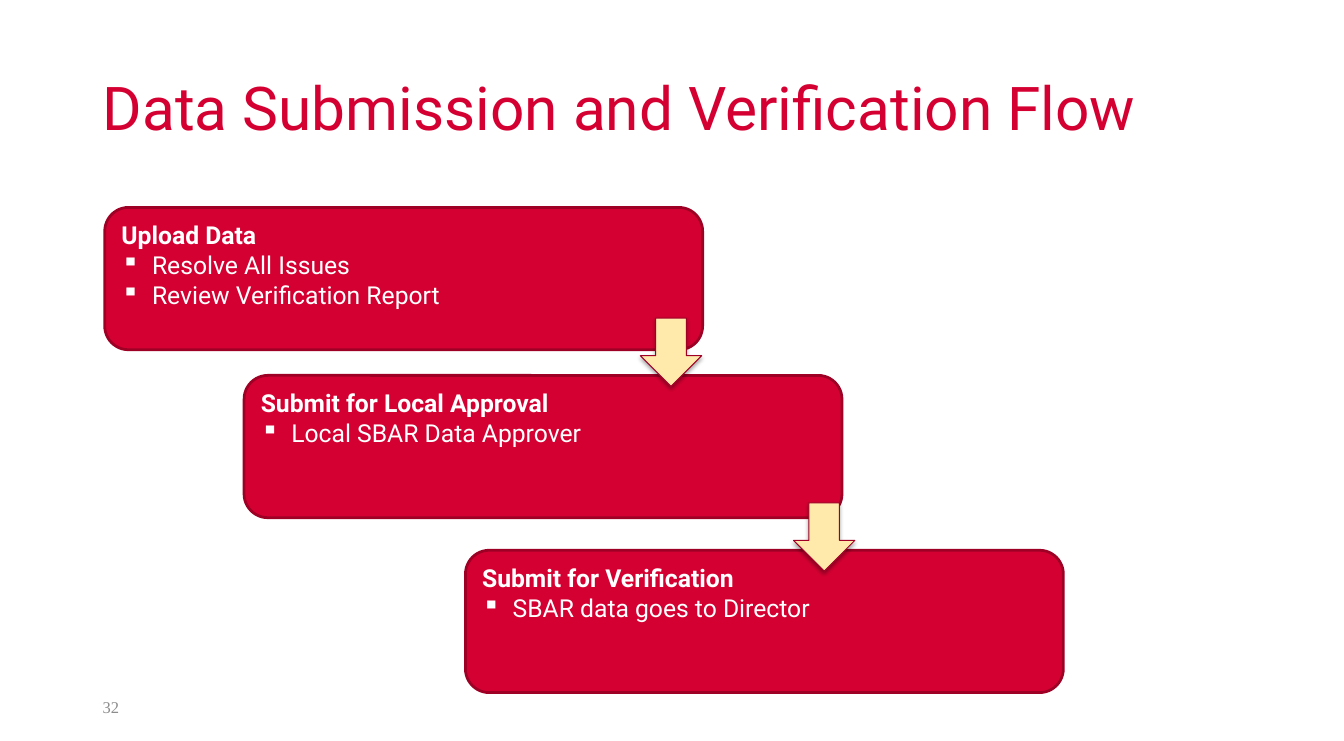
import pptx
import pptx.dml.color
import pptx.enum.shapes
import pptx.enum.text
import pptx.oxml
import pptx.oxml.ns
import pptx.util

RED = pptx.dml.color.RGBColor(0xD5, 0x00, 0x32)
DARK_RED = pptx.dml.color.RGBColor(0x9E, 0x00, 0x25)
ARROW_LINE = pptx.dml.color.RGBColor(0xA0, 0x00, 0x26)
CREAM = pptx.dml.color.RGBColor(0xFF, 0xE9, 0xAB)
GRAY = pptx.dml.color.RGBColor(0x8C, 0x8C, 0x8C)
WHITE = pptx.dml.color.RGBColor(0xFF, 0xFF, 0xFF)

SLIDE_WIDTH, SLIDE_HEIGHT = pptx.util.Inches(13.6), pptx.util.Inches(7.5)
COLUMN, ROW = SLIDE_WIDTH / 136, SLIDE_HEIGHT / 75

TITLE_BOX = (9.4, 4, 117.3, 14.5)
NUMBER_BOX = (9.4, 69.6, 30.6, 4)
STEP_SIZE = (60.5, 14.4)
ARROW_SIZE = (6.2, 6.9)
BULLET_INDENT = pptx.util.Inches(0.31)

# Column and row of the step, heading, bullets, offset of the arrow to the next step
STEPS = [
    ((10.6, 21), "Upload Data", ["Resolve All Issues", "Review Verification Report"], (54.2, 11.2)),
    ((24.7, 38), "Submit for Local Approval", ["Local SBAR Data Approver"], (55.6, 12.9)),
    ((47.1, 55.7), "Submit for Verification", ["SBAR data goes to Director"], None),
]


def grid_box(left, top, width, height):
    """Turn columns and rows into slide lengths."""
    return round(left * COLUMN), round(top * ROW), round(width * COLUMN), round(height * ROW)


def write_line(paragraph, text, size, color, font="Roboto", bold=False):
    paragraph.text = text
    formats = {"size": pptx.util.Pt(size), "name": font, "bold": bold}
    for name, value in formats.items():
        setattr(paragraph.font, name, value)
    paragraph.font.color.rgb = color


def add_bullet(paragraph):
    properties = paragraph._p.get_or_add_pPr()
    properties.set("marL", str(BULLET_INDENT))
    properties.set("indent", str(-BULLET_INDENT))
    properties.append(pptx.oxml.parse_xml(
        f'<a:buChar {pptx.oxml.ns.nsdecls("a")} char="▪"/>'))


def add_soft_shadow(shape):
    effects = pptx.oxml.parse_xml(
        f'<a:effectLst {pptx.oxml.ns.nsdecls("a")}>'
        f'<a:outerShdw blurRad="{pptx.util.Pt(3.1)}" dist="{pptx.util.Pt(1.8)}" '
        'dir="5400000" rotWithShape="0"><a:srgbClr val="000000">'
        '<a:alpha val="35000"/></a:srgbClr></a:outerShdw></a:effectLst>')
    properties = shape._element.spPr
    properties.remove(properties.find(pptx.oxml.ns.qn("a:effectLst")))
    properties.append(effects)


def add_filled_shape(slide, kind, box, fill, line, line_width):
    shape = slide.shapes.add_shape(kind, *grid_box(*box))
    shape.fill.solid()
    shape.fill.fore_color.rgb = fill
    shape.line.color.rgb = line
    shape.line.width = pptx.util.Pt(line_width)
    shape.shadow.inherit = False
    return shape


def add_title(slide, box):
    title = slide.shapes.title
    title.left, title.top, title.width, title.height = grid_box(*box)
    frame = title.text_frame
    formats = {"vertical_anchor": pptx.enum.text.MSO_ANCHOR.MIDDLE, "word_wrap": True,
               "auto_size": pptx.enum.text.MSO_AUTO_SIZE.NONE}
    for name, value in formats.items():
        setattr(frame, name, value)
    paragraph = frame.paragraphs[0]
    write_line(paragraph, "Data Submission and Verification Flow", 44, RED)
    paragraph.alignment = pptx.enum.text.PP_ALIGN.LEFT
    paragraph.line_spacing = 0.9


def add_slide_number(slide, box):
    frame = slide.shapes.add_textbox(*grid_box(*box)).text_frame
    frame.word_wrap = True
    frame.vertical_anchor = pptx.enum.text.MSO_ANCHOR.MIDDLE
    write_line(frame.paragraphs[0], "32", 12, GRAY, font="Times New Roman")


def add_step(slide, box, heading, bullets):
    shape = add_filled_shape(slide, pptx.enum.shapes.MSO_SHAPE.ROUNDED_RECTANGLE,
                             box, RED, DARK_RED, 2)
    frame = shape.text_frame
    frame.word_wrap = True
    frame.vertical_anchor = pptx.enum.text.MSO_ANCHOR.TOP
    frame.margin_top = pptx.util.Inches(0.06)
    for index, text in enumerate([heading, *bullets]):
        paragraph = frame.add_paragraph() if index else frame.paragraphs[0]
        paragraph.alignment = pptx.enum.text.PP_ALIGN.LEFT
        if index:
            add_bullet(paragraph)
        write_line(paragraph, text, 18, WHITE, bold=index == 0)


def add_flow(slide, steps):
    for position, heading, bullets, _ in steps:
        add_step(slide, (*position, *STEP_SIZE), heading, bullets)
    for (left, top), _, _, offset in steps:
        if offset:
            box = (left + offset[0], top + offset[1], *ARROW_SIZE)
            arrow = add_filled_shape(slide, pptx.enum.shapes.MSO_SHAPE.DOWN_ARROW,
                                     box, CREAM, ARROW_LINE, 0.75)
            add_soft_shadow(arrow)


def main():
    presentation = pptx.Presentation()
    presentation.slide_width, presentation.slide_height = SLIDE_WIDTH, SLIDE_HEIGHT
    slide = presentation.slides.add_slide(presentation.slide_layouts.get_by_name("Title Only"))
    add_title(slide, TITLE_BOX)
    add_slide_number(slide, NUMBER_BOX)
    add_flow(slide, STEPS)
    presentation.save("out.pptx")


if __name__ == "__main__":
    main()
